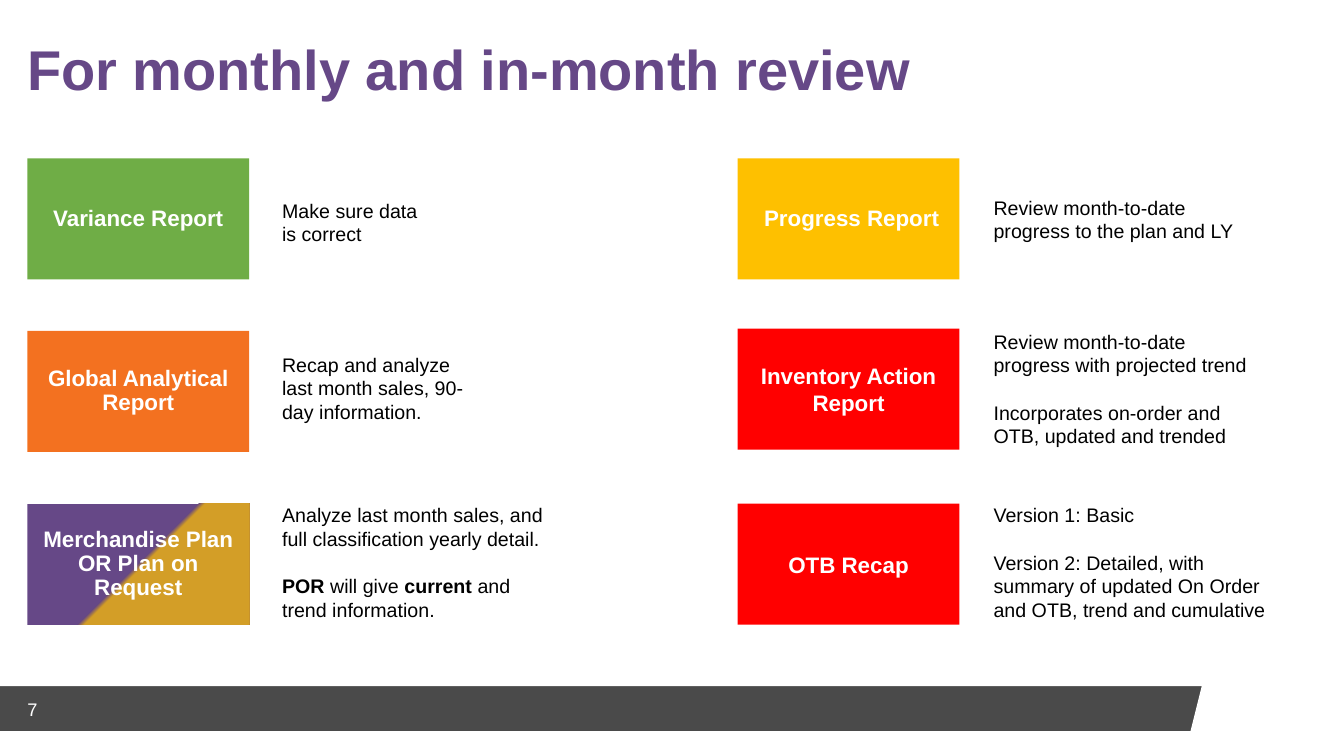
"""Build the slide of reports for monthly and in-month review."""
from lxml.etree import SubElement
from pptx import Presentation
from pptx.dml.color import RGBColor
from pptx.enum.shapes import MSO_SHAPE as Shape
from pptx.enum.text import MSO_ANCHOR as Anchor, MSO_AUTO_SIZE as Fit, PP_ALIGN as Align
from pptx.oxml.ns import qn
from pptx.util import Cm, Pt

WHITE = RGBColor(0xFF, 0xFF, 0xFF)
BLACK = RGBColor(0, 0, 0)
PURPLE = RGBColor(0x66, 0x48, 0x87)
GOLD = RGBColor(0xD3, 0x9E, 0x27)
GREEN = RGBColor(0x6F, 0xAD, 0x46)
ORANGE = RGBColor(0xF3, 0x71, 0x20)
YELLOW = RGBColor(0xFE, 0xC0, 0x00)
RED = RGBColor(0xFF, 0, 0)

EDGE = 0.69
RIGHT = 18.59
TOPS = [3.99 + 4.35 * row for row in range(3)]
NOTES = (6.86, 24.79)
SPLIT = ((0, PURPLE), (50, PURPLE), (52, GOLD), (100, GOLD))

CARDS = (
    (EDGE, TOPS[0], GREEN, "Variance Report", 0.25, 0.9),
    (EDGE, TOPS[1], ORANGE, "Global Analytical Report", 0.28, 0.9),
    (EDGE, TOPS[2], None, "Merchandise Plan OR Plan on Request", 0.25, 0.9),
    (RIGHT, TOPS[0], YELLOW, " Progress Report", 0.25, 0.9),
    (RIGHT, 8.28, RED, "Inventory Action Report", 0.13, 1),
    (RIGHT, TOPS[2], RED, "OTB Recap", 0.13, 1),
)

TEXTS = (
    (NOTES[0], 4.88, 4.22, 1.45, [[("Make sure data is correct", False)]]),
    (NOTES[0], 8.76, 5.59, 2.06,
     [[("Recap and analyze last month sales, 90-day information.", False)]]),
    (NOTES[0], 12.55, 7.21, 3.25,
     [[("Analyze last month sales, and full classification yearly detail.", False)],
      [("POR", True), (" will give ", False), ("current", True),
       (" and trend information.", False)]]),
    (NOTES[1], 4.8, 6.91, 1.45,
     [[("Review month-to-date progress to the plan and LY", False)]]),
    (NOTES[1], 8.18, 7.16, 3.25,
     [[("Review month-to-date progress with projected trend", False)],
      [("Incorporates on-order and OTB, updated and trended", False)]]),
    (NOTES[1], 12.55, 7.62, 3.25,
     [[("Version 1: Basic", False)],
      [("Version 2: Detailed, with summary of updated On Order and OTB, "
        "trend and cumulative", False)]]),
)


class Deck:
    """Hold the text style and the current slide."""

    font = "Arial"
    gap = Pt(17)

    def __init__(self):
        self.show = Presentation()
        self.show.slide_width = Cm(33.87)
        self.show.slide_height = Cm(19.05)
        self.slide = self.show.slides.add_slide(self.show.slide_layouts[5])

    def run(self, para, text, size, color, bold=False):
        run = para.add_run()
        run.text = text
        run.font.name = self.font
        run.font.size = Pt(size)
        run.font.bold = bold
        run.font.color.rgb = color

    def frame(self, shape, pads, anchor=Anchor.TOP):
        frame = shape.text_frame
        frame.word_wrap = True
        frame.auto_size = Fit.NONE
        frame.vertical_anchor = anchor
        (frame.margin_left, frame.margin_top,
         frame.margin_right, frame.margin_bottom) = map(Cm, pads)
        return frame

    def title(self, text):
        shape = self.slide.shapes.title
        shape.left, shape.top = Cm(EDGE), Cm(1.07)
        shape.width, shape.height = Cm(22.71), Cm(1.65)
        para = self.frame(shape, (0, 0, 0, 0.25)).paragraphs[0]
        para.alignment = Align.LEFT
        para.line_spacing = 0.9
        self.run(para, text, 40, PURPLE, True)

    def card(self, left, top, color, text, pad, space):
        shape = self.slide.shapes.add_shape(
            Shape.RECTANGLE, Cm(left), Cm(top), Cm(5.59), Cm(3.05))
        shape.shadow.inherit = False
        shape.line.fill.background()
        if color is None:
            self.blend(shape, SPLIT)
        else:
            shape.fill.solid()
            shape.fill.fore_color.rgb = color
        side = max(pad, 0.25)
        para = self.frame(shape, (side, pad, side, pad), Anchor.MIDDLE).paragraphs[0]
        para.alignment = Align.CENTER
        para.line_spacing = float(space)
        self.run(para, text, 16, WHITE, True)

    def blend(self, shape, stops):
        shape.fill.gradient()
        shape.fill.gradient_angle = 315
        items = shape._element.spPr.find(qn("a:gradFill")).find(qn("a:gsLst"))
        for old in list(items):
            items.remove(old)
        for pos, color in stops:
            stop = SubElement(items, qn("a:gs"), pos=str(pos * 1000))
            SubElement(stop, qn("a:srgbClr"), val=str(color))

    def note(self, left, top, width, height, paras):
        box = self.slide.shapes.add_textbox(Cm(left), Cm(top), Cm(width), Cm(height))
        frame = self.frame(box, (0.25, 0.13, 0.25, 0.13))
        for num, runs in enumerate(paras):
            para = frame.add_paragraph() if num else frame.paragraphs[0]
            if num:
                para.space_before = self.gap
            for text, bold in runs:
                self.run(para, text, 14, BLACK, bold)

    def footer(self, number):
        band = self.slide.shapes.add_shape(
            Shape.PARALLELOGRAM, Cm(-0.53), Cm(17.27), Cm(30.84), Cm(1.17))
        band.adjustments[0] = 0.25
        band.shadow.inherit = False
        band.fill.solid()
        band.fill.fore_color.rgb = BLACK
        tint = band._element.spPr.find(qn("a:solidFill"))[0]
        SubElement(tint, qn("a:alpha"), val="71000")
        band.line.color.rgb = WHITE
        band.line.width = Pt(1)
        box = self.slide.shapes.add_textbox(Cm(EDGE), Cm(17.4), Cm(1.4), Cm(0.94))
        para = self.frame(box, (0, 0, 0, 0), Anchor.MIDDLE).paragraphs[0]
        self.run(para, number, 13, WHITE)


def main():
    deck = Deck()
    deck.footer("7")
    deck.title("For monthly and in-month review")
    for card in CARDS:
        deck.card(*card)
    for text in TEXTS:
        deck.note(*text)
    deck.show.save("out.pptx")


if __name__ == "__main__":
    main()
